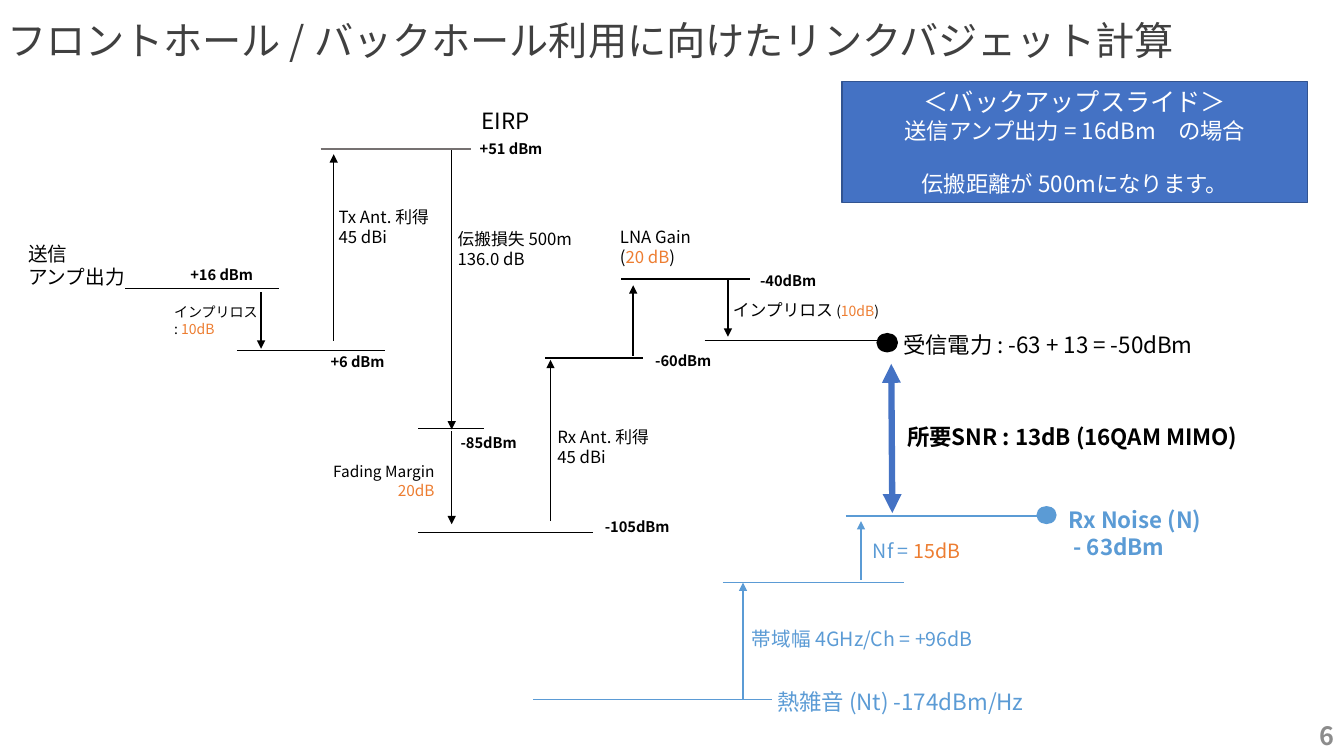
from lxml.etree import SubElement
from pptx import Presentation
from pptx.dml.color import RGBColor
from pptx.enum.shapes import MSO_CONNECTOR, MSO_SHAPE
from pptx.enum.text import MSO_ANCHOR, PP_ALIGN
from pptx.oxml.ns import qn
from pptx.util import Inches, Pt

FONT = "Noto Sans CJK JP"
COLORS = {
    "black": "000000", "white": "FFFFFF", "title": "404040", "number": "8C8C8C",
    "peak": "767171", "accent": "ED7D31", "noise": "5B9BD5",
    "blue": "4472C4", "edge": "325491",
}
LEFT, CENTER, RIGHT = PP_ALIGN.LEFT, PP_ALIGN.CENTER, PP_ALIGN.RIGHT
COLUMN = ROW = Inches(0.1)

presentation = Presentation()
presentation.slide_width = Inches(13.33)
presentation.slide_height = Inches(7.5)
slide = presentation.slides.add_slide(presentation.slide_layouts[6])


def write(shape, lines, size, color="black", bold=False, align=LEFT):
    """Segments between bars alternate between the base colour and the accent."""
    frame = shape.text_frame
    frame.word_wrap = True
    for index, line in enumerate(lines):
        paragraph = frame.paragraphs[0] if index == 0 else frame.add_paragraph()
        paragraph.alignment = align
        for position, segment in enumerate(line.split("|")):
            if not segment:
                continue
            run = paragraph.add_run()
            run.text = segment
            run.font.size = Pt(size)
            run.font.bold = bold
            run.font.name = FONT
            run.font.color.rgb = RGBColor.from_string(COLORS["accent" if position % 2 else color])
            SubElement(run.font._element, qn("a:ea")).set("typeface", FONT)
    return frame


def draw_line(start, end, color, width=1, heads=()):
    connector = slide.shapes.add_connector(
        MSO_CONNECTOR.STRAIGHT,
        int(start[0] * COLUMN), int(start[1] * ROW), int(end[0] * COLUMN), int(end[1] * ROW))
    connector.line.width = Pt(width)
    connector.line.color.rgb = RGBColor.from_string(COLORS[color])
    outline = connector._element.spPr.find(qn("a:ln"))
    for head in heads:
        SubElement(outline, qn(f"a:{head}")).set("type", "triangle")
    SubElement(connector._element.spPr, qn("a:effectLst"))


levels = [
    (12.4, 27.7, 28.6, "black"), (31.8, 46.7, 14.8, "peak"),
    (23.5, 38.2, 34.8, "black"), (41.5, 58.8, 52.8, "black"),
    (41.5, 48, 42.5, "black"), (61.6, 74.4, 27.7, "black"),
    (69.9, 88.6, 33.8, "black"), (54.1, 63.8, 35.5, "black"),
    (52.9, 76.6, 69.4, "noise"), (71.7, 89.7, 57.8, "noise"),
    (83.9, 103.6, 51.2, "noise"),
]
for left, right, height, color in levels:
    draw_line((left, height), (right, height), color)

steps = [
    (33.1, 33.8, 15.3, "black"), (25.9, 29, 34.6, "black"),
    (44.8, 14.9, 42.6, "black"), (44.8, 42.8, 52, "black"),
    (54.6, 51.7, 35.7, "black"), (62.8, 35.3, 28.3, "black"),
    (72.2, 27.8, 33.4, "black"), (85.4, 57.5, 51.7, "noise"),
    (73.7, 69.4, 57.8, "noise"),
]
for column, start, end, color in steps:
    draw_line((column, start), (column, end), color, heads=["tailEnd"])
draw_line((88.4, 36.1), (88.5, 50.9), "blue", 4.5, ["headEnd", "tailEnd"])

labels = [
    (1.8, 23.5, 12.7, 5.7, ["送信", "アンプ出力"], 14, "black", False, LEFT),
    (46.8, 10.1, 24.3, 3.7, ["EIRP"], 16, "black", False, LEFT),
    (16.3, 29.6, 11, 4.4, ["インプリロス", ": |10dB"], 10, "black", False, LEFT),
    (32.6, 20, 12, 5, ["Tx Ant. 利得", "45 dBi"], 12, "black", False, LEFT),
    (44.4, 22.2, 17.7, 7.1, ["伝搬損失 500m", "136.0 dB"], 12, "black", False, LEFT),
    (27, 45.4, 17.1, 4.7, ["Fading Margin", "|20dB"], 11, "black", False, RIGHT),
    (54.3, 41.8, 15.6, 5, ["Rx Ant. 利得", "45 dBi"], 12, "black", False, LEFT),
    (60.5, 22, 13.2, 5, ["LNA Gain", "(|20 dB|)"], 12, "black", False, LEFT),
    (88.6, 32.4, 33.8, 3.7, ["受信電力 : -63 + 13 = -50dBm"], 16, "black", False, LEFT),
    (89, 41.5, 38.7, 3.7, ["所要SNR : 13dB (16QAM MIMO)"], 16, "black", True, LEFT),
    (105, 49.7, 21.4, 6.4, ["Rx Noise (N)", " - 63dBm"], 16, "noise", True, LEFT),
    (85.6, 53, 13.7, 3.4, ["Nf = |15dB"], 14, "noise", False, LEFT),
    (73.6, 61.7, 25.7, 3.4, ["帯域幅 4GHz/Ch = +96dB"], 14, "noise", False, LEFT),
    (76.1, 67.8, 32.4, 3.7, ["熱雑音 (Nt) -174dBm/Hz"], 16, "noise", False, LEFT),
]
powers = [
    (17.9, 25.9, "+16 dBm"), (31.8, 34.5, "+6 dBm"), (46.6, 13.4, "+51 dBm"),
    (44.7, 42.5, "-85dBm"), (59, 50.9, "-105dBm"), (64, 34.4, "-60dBm"),
    (74.4, 26.5, "-40dBm"),
]
labels += [(left, top, 10.7, 2.9, [power], 10.5, "black", True, LEFT)
           for left, top, power in powers]
for left, top, width, height, *content in labels:
    label = slide.shapes.add_textbox(
        int(left * COLUMN), int(top * ROW), int(width * COLUMN), int(height * ROW))
    write(label, *content)

loss = slide.shapes.add_textbox(
    int(71.7 * COLUMN), int(29.2 * ROW), int(21.7 * COLUMN), 3 * ROW)
loss_frame = write(loss, ["インプリロス|| (|10dB|)"], 12)
for run in loss_frame.paragraphs[0].runs[1:]:
    run.font.size = Pt(10)

title = slide.shapes.add_textbox(0, 0, presentation.slide_width, int(8.5 * ROW))
title_frame = write(title, ["フロントホール / バックホール利用に向けたリンクバジェット計算"], 28, "title")
title_frame.vertical_anchor = MSO_ANCHOR.MIDDLE
title_frame.margin_left = title_frame.margin_right = Inches(0.07)
title_frame.margin_top = title_frame.margin_bottom = 0
title_frame.paragraphs[0].line_spacing = 0.9

number = slide.shapes.add_textbox(int(103.3 * COLUMN), 71 * ROW, 30 * COLUMN, 4 * ROW)
write(number, ["6"], 18, "number", True, RIGHT).vertical_anchor = MSO_ANCHOR.MIDDLE

solids = [
    (MSO_SHAPE.OVAL, 102.8, 50.2, 2, 1.8, "noise", None),
    (MSO_SHAPE.OVAL, 87, 33.1, 2, 1.8, "black", "black"),
    (MSO_SHAPE.RECTANGLE, 83.5, 8.1, 46.2, 12, "blue", "edge"),
]
for kind, left, top, width, height, fill, edge in solids:
    shape = slide.shapes.add_shape(
        kind, int(left * COLUMN), int(top * ROW), int(width * COLUMN), int(height * ROW))
    shape.shadow.inherit = False
    shape.fill.solid()
    shape.fill.fore_color.rgb = RGBColor.from_string(COLORS[fill])
    if edge:
        shape.line.color.rgb = RGBColor.from_string(COLORS[edge])
        shape.line.width = Pt(1)
    else:
        shape.line.fill.background()
    if kind == MSO_SHAPE.RECTANGLE:
        notice = write(shape, ["＜バックアップスライド＞", "送信アンプ出力 = 16dBm　の場合",
                               "伝搬距離が 500mになります。"], 16, "white", align=CENTER)
        notice.vertical_anchor = MSO_ANCHOR.MIDDLE
        notice.paragraphs[0].runs[0].font.size = Pt(18)
        notice.paragraphs[2].space_before = Pt(19)

presentation.save("out.pptx")
